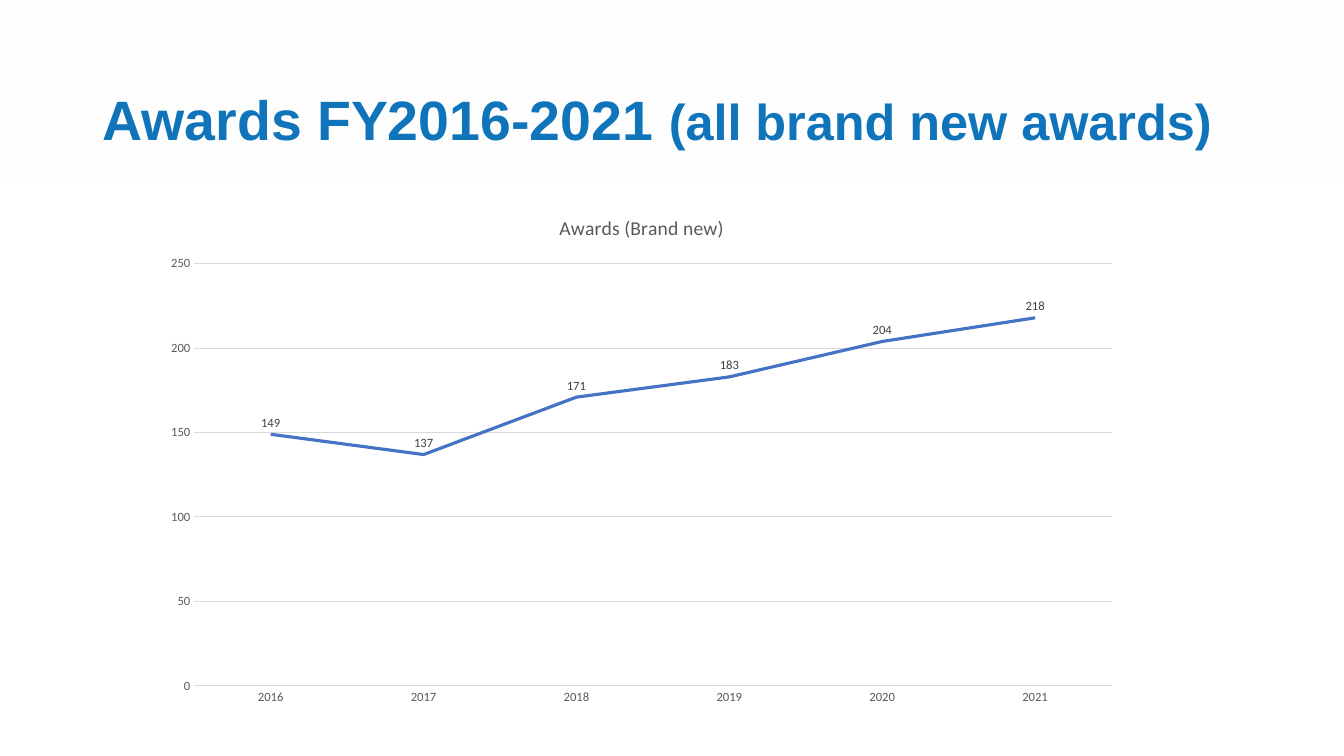
import pptx
import pptx.util
import pptx.chart.data
import pptx.dml.color
import pptx.enum.chart
import pptx.enum.dml
import pptx.enum.shapes
import pptx.enum.text
import pptx.oxml
import pptx.oxml.ns

Inches = pptx.util.Inches
Pt = pptx.util.Pt

AWARDS = {"2016": 149, "2017": 137, "2018": 171, "2019": 183, "2020": 204, "2021": 218}
PLOT_AREA = {"x": 0.043, "y": 0.133, "w": 0.937, "h": 0.81}


def color(value):
    return pptx.dml.color.RGBColor.from_string(value)


def set_values(target, values):
    for name, value in values.items():
        setattr(target, name, value)


def set_font(font, size, value, name="Calibri", bold=False):
    set_values(font, {"size": Pt(size), "name": name, "bold": bold})
    font.color.rgb = color(value)


def set_line(line, value, width):
    line.color.rgb = color(value)
    line.width = Pt(width)


def add_pattern_band(page, left, top, width, height):
    band = page.shapes.add_shape(
        pptx.enum.shapes.MSO_SHAPE.RECTANGLE,
        Inches(left), Inches(top), Inches(width), Inches(height))
    band.shadow.inherit = False
    band.line.fill.background()
    band.fill.patterned()
    band.fill.pattern = pptx.enum.dml.MSO_PATTERN.WIDE_UPWARD_DIAGONAL
    band.fill.fore_color.rgb = color("F2F2F2")
    band.fill.back_color.rgb = color("FFFFFF")


def add_title(page, left, top, width, height, spans):
    box = page.shapes.add_textbox(Inches(left), Inches(top), Inches(width), Inches(height))
    set_values(box.text_frame, {
        "word_wrap": True,
        "vertical_anchor": pptx.enum.text.MSO_ANCHOR.BOTTOM,
        "margin_bottom": Inches(0.29),
    })
    para = box.text_frame.paragraphs[0]
    para.line_spacing = 0.9
    for text, size in spans:
        span = para.add_run()
        span.text = text
        set_font(span.font, size, "1074BA", "Arial", True)


def set_plot_area(chart, fractions):
    namespace = pptx.oxml.ns.nsdecls("c")
    modes = "".join(f'<c:{axis}Mode val="edge"/>' for axis in "xy")
    sizes = "".join(f'<c:{name} val="{value}"/>' for name, value in fractions.items())
    layout = pptx.oxml.parse_xml(
        f'<c:layout {namespace}><c:manualLayout><c:layoutTarget val="inner"/>'
        f'{modes}{sizes}</c:manualLayout></c:layout>')
    plot_area = chart._chartSpace.chart.plotArea
    for old_layout in plot_area.findall(pptx.oxml.ns.qn("c:layout")):
        plot_area.remove(old_layout)
    plot_area.insert(0, layout)


def format_axes(chart):
    for axis in (chart.category_axis, chart.value_axis):
        set_values(axis, {
            "major_tick_mark": pptx.enum.chart.XL_TICK_MARK.NONE,
            "minor_tick_mark": pptx.enum.chart.XL_TICK_MARK.NONE,
        })
        set_font(axis.tick_labels.font, 9, "595959")
    set_line(chart.category_axis.format.line, "D9D9D9", 0.75)
    set_values(chart.value_axis, {
        "minimum_scale": 0, "maximum_scale": 250, "major_unit": 50,
        "has_major_gridlines": True,
    })
    chart.value_axis.format.line.fill.background()
    set_line(chart.value_axis.major_gridlines.format.line, "D9D9D9", 0.75)


def format_series(series):
    series.smooth = False
    series.marker.style = pptx.enum.chart.XL_MARKER_STYLE.NONE
    set_line(series.format.line, "4472C4", 2.25)
    set_values(series.data_labels, {
        "show_value": True,
        "position": pptx.enum.chart.XL_LABEL_POSITION.ABOVE,
    })
    set_font(series.data_labels.font, 9, "404040")


def add_line_chart(page, left, top, width, height, title, values):
    data = pptx.chart.data.CategoryChartData()
    data.categories = list(values)
    data.add_series("Series 1", list(values.values()))
    chart = page.shapes.add_chart(
        pptx.enum.chart.XL_CHART_TYPE.LINE,
        Inches(left), Inches(top), Inches(width), Inches(height), data).chart
    set_font(chart.font, 10, "000000")
    set_values(chart, {"has_legend": False, "has_title": True})
    chart.chart_title.include_in_layout = False
    chart.chart_title.text_frame.text = title
    set_font(chart.chart_title.text_frame.paragraphs[0].runs[0].font, 14, "595959")
    chart.plots[0].vary_by_categories = False
    format_axes(chart)
    format_series(chart.plots[0].series[0])
    set_plot_area(chart, PLOT_AREA)


def main():
    deck = pptx.Presentation()
    set_values(deck, {"slide_width": Inches(13.33), "slide_height": Inches(7.5)})
    page = deck.slides.add_slide(deck.slide_layouts[6])
    add_pattern_band(page, 0, 0, 13.33, 1.8)
    add_title(page, 0.92, 0.4, 11.5, 1.4,
              [("Awards FY2016-2021 ", 39.6), ("(all brand new awards)", 36)])
    add_line_chart(page, 1.51, 1.93, 9.71, 5.17, "Awards (Brand new)", AWARDS)
    deck.save("out.pptx")


if __name__ == "__main__":
    main()
